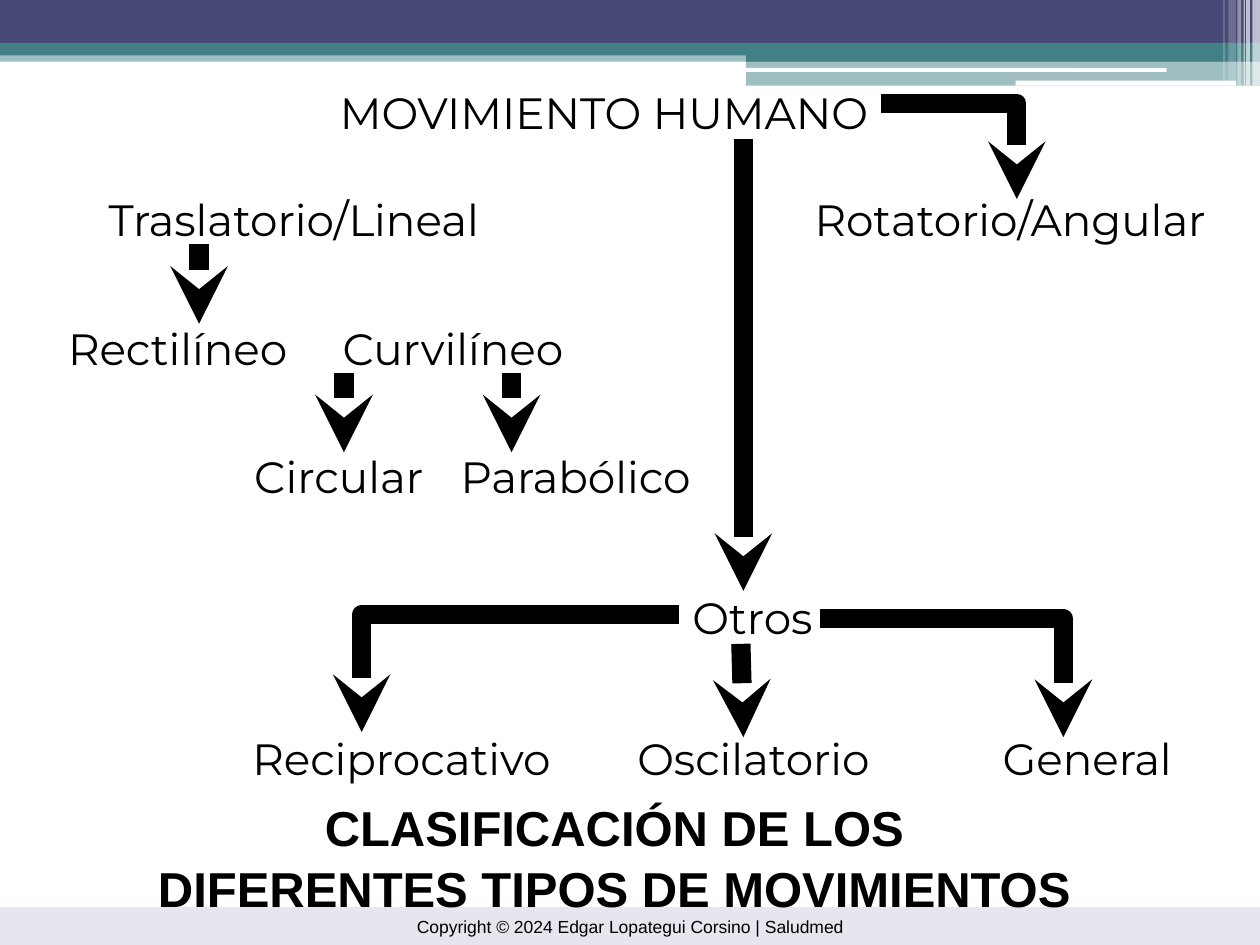
import pptx
import pptx.dml.color
import pptx.enum.shapes
import pptx.enum.text
import pptx.oxml
import pptx.oxml.ns
import pptx.util
from pptx.util import Inches

RGBColor = pptx.dml.color.RGBColor
SHAPE = pptx.enum.shapes.MSO_SHAPE
ALIGN = pptx.enum.text.PP_ALIGN
INDIGO = RGBColor(0x48, 0x48, 0x76)
TEAL = RGBColor(0x43, 0x80, 0x86)
LAVENDER = RGBColor(0xE6, 0xE6, 0xEF)
WHITE = RGBColor(0xFF, 0xFF, 0xFF)
BLACK = RGBColor(0, 0, 0)

presentation = pptx.Presentation()
presentation.slide_width, presentation.slide_height = Inches(10), Inches(7.5)
slide = presentation.slides.add_slide(presentation.slide_layouts[6])


def style_text(paragraph, size, font_name, align, bold=False):
    paragraph.alignment = align
    for run in paragraph.runs:
        run.font.size = pptx.util.Pt(size)
        run.font.name = font_name
        run.font.bold = bold
        run.font.color.rgb = BLACK


def style_arrow(arrow):
    arrow.line.color.rgb = BLACK
    arrow.line.width = pptx.util.Pt(11)
    arrow.line._get_or_add_ln().append(pptx.oxml.parse_xml(
        f'<a:tailEnd {pptx.oxml.ns.nsdecls("a")} type="stealth"/>'))


# Header bands, white rules and stripes, footer band: box, colour, opacity %
bands = [
    (SHAPE.RECTANGLE, 0, 0.4, 10, 0.09, TEAL, 50),
    (SHAPE.RECTANGLE, 0, 0, 10, 0.34, INDIGO, 100),
    (SHAPE.RECTANGLE, 0, 0.34, 10, 0.1, TEAL, 100),
    (SHAPE.RECTANGLE, 5.92, 0.39, 4.08, 0.1, TEAL, 100),
    (SHAPE.RECTANGLE, 5.92, 0.48, 4.08, 0.2, TEAL, 50),
    (SHAPE.ROUNDED_RECTANGLE, 5.91, 0.54, 3.35, 0.03, WHITE, 100),
    (SHAPE.ROUNDED_RECTANGLE, 8.06, 0.64, 1.75, 0.04, WHITE, 100),
    (SHAPE.RECTANGLE, 9.94, 0, 0.06, 0.68, WHITE, 65),
    (SHAPE.RECTANGLE, 9.89, 0, 0.03, 0.68, WHITE, 65),
    (SHAPE.RECTANGLE, 9.87, 0, 0.01, 0.68, WHITE, 60),
    (SHAPE.RECTANGLE, 9.82, 0, 0.03, 0.68, WHITE, 40),
    (SHAPE.RECTANGLE, 9.75, 0, 0.06, 0.64, WHITE, 20),
    (SHAPE.RECTANGLE, 9.71, 0, 0.01, 0.64, WHITE, 30),
    (SHAPE.RECTANGLE, 0, 7.2, 10, 0.3, LAVENDER, 100),
]
for preset, left, top, width, height, color, opacity in bands:
    band = slide.shapes.add_shape(
        preset, Inches(left), Inches(top), Inches(width), Inches(height))
    band.shadow.inherit = False
    band.line.fill.background()
    band.fill.solid()
    band.fill.fore_color.rgb = color
    if opacity < 100:
        color_xml = band.fill._xPr.find(".//" + pptx.oxml.ns.qn("a:srgbClr"))
        color_xml.append(pptx.oxml.parse_xml(
            f'<a:alpha {pptx.oxml.ns.nsdecls("a")} val="{opacity * 1000}"/>'))

# Copyright line, in the footer band drawn last
footer = band.text_frame
footer.text = "Copyright © 2024 Edgar Lopategui Corsino | Saludmed"
footer.vertical_anchor = pptx.enum.text.MSO_ANCHOR.MIDDLE
style_text(footer.paragraphs[0], 10, "Arial", ALIGN.CENTER)

# Title
title = slide.shapes.add_textbox(
    Inches(0.5), Inches(6.26), Inches(8.75), Inches(1.03)).text_frame
title.word_wrap = True
title.text = "CLASIFICACIÓN DE LOS\nDIFERENTES TIPOS DE MOVIMIENTOS"
for line in title.paragraphs:
    style_text(line, 28, "Arial", ALIGN.CENTER, bold=True)
    line.line_spacing = 1.04

# Diagram labels: text, left, top, width
labels = [
    ("MOVIMIENTO HUMANO", 2.45, 0.68, 4.44),
    ("Traslatorio/Lineal", 0.46, 1.53, 3.34),
    ("Rotatorio/Angular", 6.23, 1.53, 3.34),
    ("Rectilíneo", 0.35, 2.55, 1.93),
    ("Curvilíneo", 2.56, 2.55, 1.91),
    ("Circular", 1.85, 3.57, 1.51),
    ("Parabólico", 3.46, 3.57, 2.02),
    ("Otros", 5.41, 4.69, 1.04),
    ("Reciprocativo", 1.73, 5.81, 2.64),
    ("Oscilatorio", 4.82, 5.81, 2.08),
    ("General", 7.82, 5.81, 1.48),
]
for text, left, top, width in labels:
    label = slide.shapes.add_textbox(
        Inches(left), Inches(top), Inches(width), Inches(0.42)).text_frame
    label.margin_left = label.margin_right = 0
    label.margin_top = label.margin_bottom = 0
    label.word_wrap = False
    label.auto_size = pptx.enum.text.MSO_AUTO_SIZE.SHAPE_TO_FIT_TEXT
    label.text = text
    style_text(label.paragraphs[0], 25, "Montserrat", ALIGN.RIGHT)

# Elbow arrows: start x, start y, end x, end y
elbows = [
    (5.39, 4.88, 2.87, 5.81),
    (6.99, 0.82, 8.07, 1.58),
    (6.51, 4.91, 8.44, 5.85),
]
for start_x, start_y, end_x, end_y in elbows:
    builder = slide.shapes.build_freeform(Inches(start_x), Inches(start_y))
    builder.add_line_segments(
        [(Inches(end_x), Inches(start_y)), (Inches(end_x), Inches(end_y))],
        close=False)
    elbow = builder.convert_to_shape()
    elbow.shadow.inherit = False
    elbow.fill.background()
    style_arrow(elbow)

# Straight arrows: start x, start y, end x, end y
straights = [
    (1.58, 1.94, 1.58, 2.57),
    (2.73, 2.96, 2.73, 3.59),
    (4.06, 2.96, 4.06, 3.59),
    (5.9, 1.1, 5.9, 4.69),
    (5.88, 5.11, 5.9, 5.85),
]
for ends in straights:
    straight = slide.shapes.add_connector(
        pptx.enum.shapes.MSO_CONNECTOR.STRAIGHT, *map(Inches, ends))
    style_arrow(straight)
    straight._element.spPr.append(pptx.oxml.parse_xml(
        f'<a:effectLst {pptx.oxml.ns.nsdecls("a")}/>'))

presentation.save("out.pptx")
